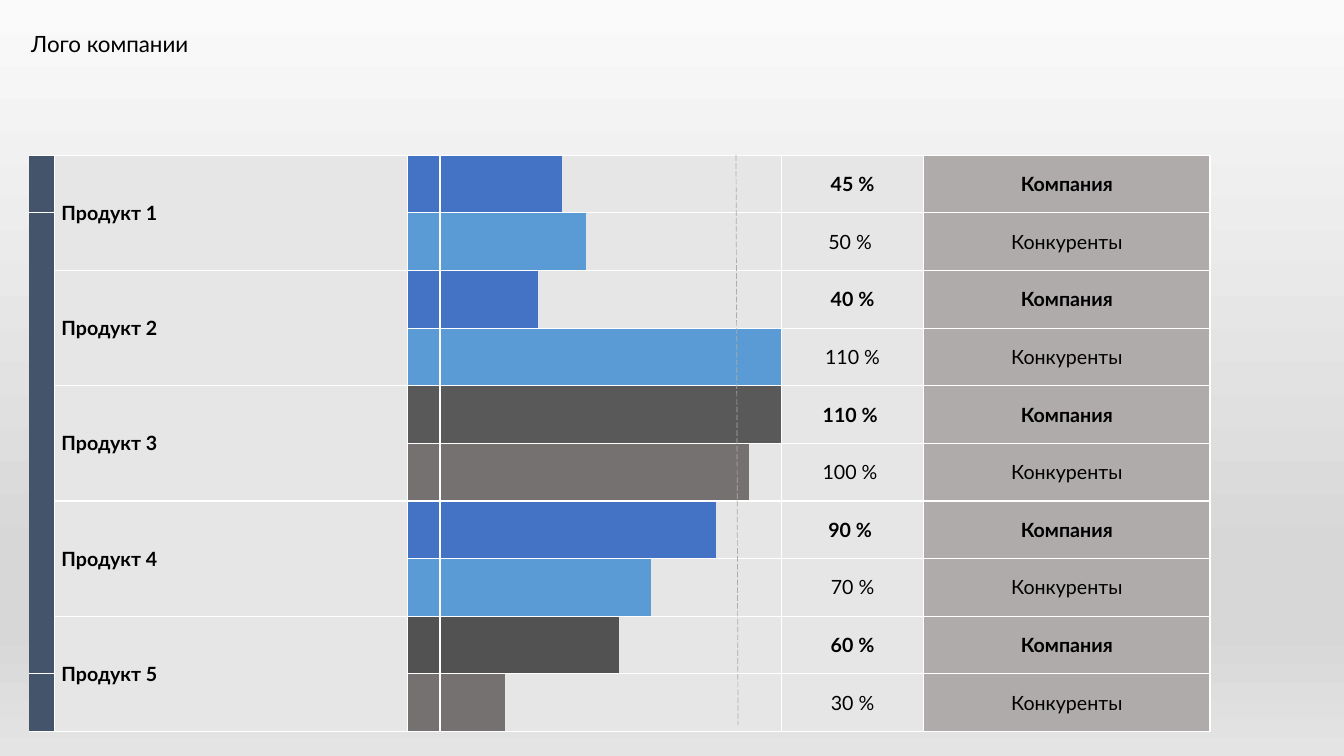
import pptx
import pptx.util
import pptx.dml.color
import pptx.enum.dml
import pptx.enum.shapes
import pptx.enum.text
import pptx.oxml
import pptx.oxml.ns
import copy

RGB = pptx.dml.color.RGBColor
Inches, Pt = pptx.util.Inches, pptx.util.Pt
qn = pptx.oxml.ns.qn
ALIGN = pptx.enum.text.PP_ALIGN

BLACK = RGB(0x00, 0x00, 0x00)
WHITE = RGB(0xFF, 0xFF, 0xFF)
NAVY = RGB(0x44, 0x54, 0x6A)
PALE = RGB(0xE7, 0xE6, 0xE6)
SILVER = RGB(0xAF, 0xAB, 0xAB)
BLUE = RGB(0x44, 0x72, 0xC4)
SKY = RGB(0x5B, 0x9B, 0xD5)
CHARCOAL = RGB(0x59, 0x59, 0x59)
GRAPHITE = RGB(0x52, 0x52, 0x52)
STONE = RGB(0x76, 0x71, 0x71)
BACKGROUND = [(0, RGB(0xFA, 0xFA, 0xFA)), (0.74, RGB(0xD7, 0xD7, 0xD7)),
              (0.83, RGB(0xD7, 0xD7, 0xD7)), (1, RGB(0xE4, 0xE4, 0xE4))]

FONT = "Lato"
NO_STYLE = "{2D5ABB26-0587-4C30-8999-92F81FD0307C}"
LOGO = "Лого компании"
OWNERS = ["Компания", "Конкуренты"]
# product, then (percent label, bar colour) for each owner
PRODUCTS = [
    ("Продукт 1", [("45 %", BLUE), ("50 % ", SKY)]),
    ("Продукт 2", [("40 %", BLUE), ("110 %", SKY)]),
    ("Продукт 3", [("110 % ", CHARCOAL), ("100 % ", STONE)]),
    ("Продукт 4", [("90 % ", BLUE), ("70 %", SKY)]),
    ("Продукт 5", [("60 %", GRAPHITE), ("30 %", STONE)]),
]

# Each bar column ends at one of these percentages; 40-50 is split in two
STEPS = [10, 20, 30, 40, 45, 50, 60, 70, 80, 90, 100, 110]
HALVES = (STEPS.index(45), STEPS.index(50))
BAR_WIDTH, HALF_SHARE = 3.61, 0.58
FIRST_BAR = 2
LAST_BAR = FIRST_BAR + len(STEPS) - 1
VALUE_COL, OWNER_COL = LAST_BAR + 1, LAST_BAR + 2
LEFT, TOP, HEIGHT = 0.29, 1.54, 5.72

weights = [HALF_SHARE if i in HALVES else 1 for i in range(len(STEPS))]
widths = [0.25, 3.5, *(BAR_WIDTH * w / sum(weights) for w in weights), 1.41, 2.84]
row_count = len(PRODUCTS) * len(OWNERS)


def format_run(r, **font):
    r.font.name = FONT
    r.font.color.rgb = BLACK
    for name, value in font.items():
        setattr(r.font, name, value)


def paint(cell, color, sides):
    """Fill a cell and draw white borders on the sides named, out of LRTB."""
    tcPr = cell._tc.get_or_add_tcPr()
    for side in "LRTB":
        if side in sides:
            tcPr.append(pptx.oxml.parse_xml(
                f'<a:ln{side} {pptx.oxml.ns.nsdecls("a")} w="{Pt(1)}"><a:solidFill>'
                f'<a:srgbClr val="{WHITE}"/></a:solidFill></a:ln{side}>'))
    cell.fill.solid()
    cell.fill.fore_color.rgb = color


def write(cell, text, bold, align):
    cell.vertical_anchor = pptx.enum.text.MSO_ANCHOR.MIDDLE
    for side, inset in {"left": 0.07, "right": 0.07, "top": 0.04, "bottom": 0.04}.items():
        setattr(cell, f"margin_{side}", Inches(inset))
    p = cell.text_frame.paragraphs[0]
    p.alignment = align
    r = p.add_run()
    r.text = text
    format_run(r, size=Pt(14), bold=bold)


def add_background(s):
    fill = s.background.fill
    fill.gradient()
    fill.gradient_angle = 270
    stops = s.element.find(".//" + qn("a:gsLst"))
    while len(stops) < len(BACKGROUND):
        stops.append(copy.deepcopy(stops[0]))
    for stop, (position, color) in zip(fill.gradient_stops, BACKGROUND):
        stop.position = position
        stop.color.rgb = color


def add_comparison(s):
    frame = s.shapes.add_table(row_count, len(widths), Inches(LEFT), Inches(TOP),
                               Inches(sum(widths)), Inches(HEIGHT))
    table = frame.table
    table.first_row = table.horz_banding = False
    table._tbl.tblPr.find(qn("a:tableStyleId")).text = NO_STYLE
    for column, width in zip(table.columns, widths):
        column.width = Inches(width)
    for row in table.rows:
        row.height = Inches(HEIGHT / row_count)

    for i, (product, bars) in enumerate(PRODUCTS):
        first = i * len(OWNERS)
        for j, (label, color) in enumerate(bars):
            y = first + j
            bold = j == 0
            paint(table.cell(y, 0), NAVY, "RTB" if y in (0, row_count - 1) else "R")
            paint(table.cell(y, 1), PALE, "LRTB")
            percent = int(label.split()[0])
            for x, step in enumerate(STEPS, FIRST_BAR):
                sides = "TB" + "L" * (x == FIRST_BAR) + "R" * (x == LAST_BAR)
                paint(table.cell(y, x), color if step <= percent else PALE, sides)
            if y > 0:
                half, other = (FIRST_BAR + k for k in HALVES)
                table.cell(y, half).merge(table.cell(y, other))
            for x, text, fill in ((VALUE_COL, label, PALE), (OWNER_COL, OWNERS[j], SILVER)):
                paint(table.cell(y, x), fill, "LRTB")
                write(table.cell(y, x), text, bold, ALIGN.CENTER)
        table.cell(first, 1).merge(table.cell(first + len(OWNERS) - 1, 1))
        write(table.cell(first, 1), product, True, ALIGN.LEFT)


def add_logo_text(s):
    tf = s.shapes.add_textbox(Inches(0.21), Inches(0.25), Inches(1.76), Inches(0.37)).text_frame
    tf.word_wrap = False
    tf.auto_size = pptx.enum.text.MSO_AUTO_SIZE.SHAPE_TO_FIT_TEXT
    p = tf.paragraphs[0]
    p.alignment = ALIGN.CENTER
    r = p.add_run()
    r.text = LOGO
    format_run(r, size=Pt(16))


def add_target_line(s):
    line = s.shapes.add_connector(pptx.enum.shapes.MSO_CONNECTOR.STRAIGHT, Inches(7.3),
                                  Inches(TOP), Inches(7.32), Inches(7.19))
    line.line.color.rgb = SILVER
    line.line.width = Pt(0.5)
    line.line.dash_style = pptx.enum.dml.MSO_LINE.LONG_DASH
    line._element.spPr.append(pptx.oxml.parse_xml(
        f'<a:effectLst {pptx.oxml.ns.nsdecls("a")}/>'))


def main():
    prs = pptx.Presentation()
    prs.slide_width, prs.slide_height = Inches(13.33), Inches(7.5)
    s = prs.slides.add_slide(prs.slide_layouts.get_by_name("Blank"))
    add_background(s)
    add_comparison(s)
    add_logo_text(s)
    add_target_line(s)
    prs.save("out.pptx")


if __name__ == "__main__":
    main()
